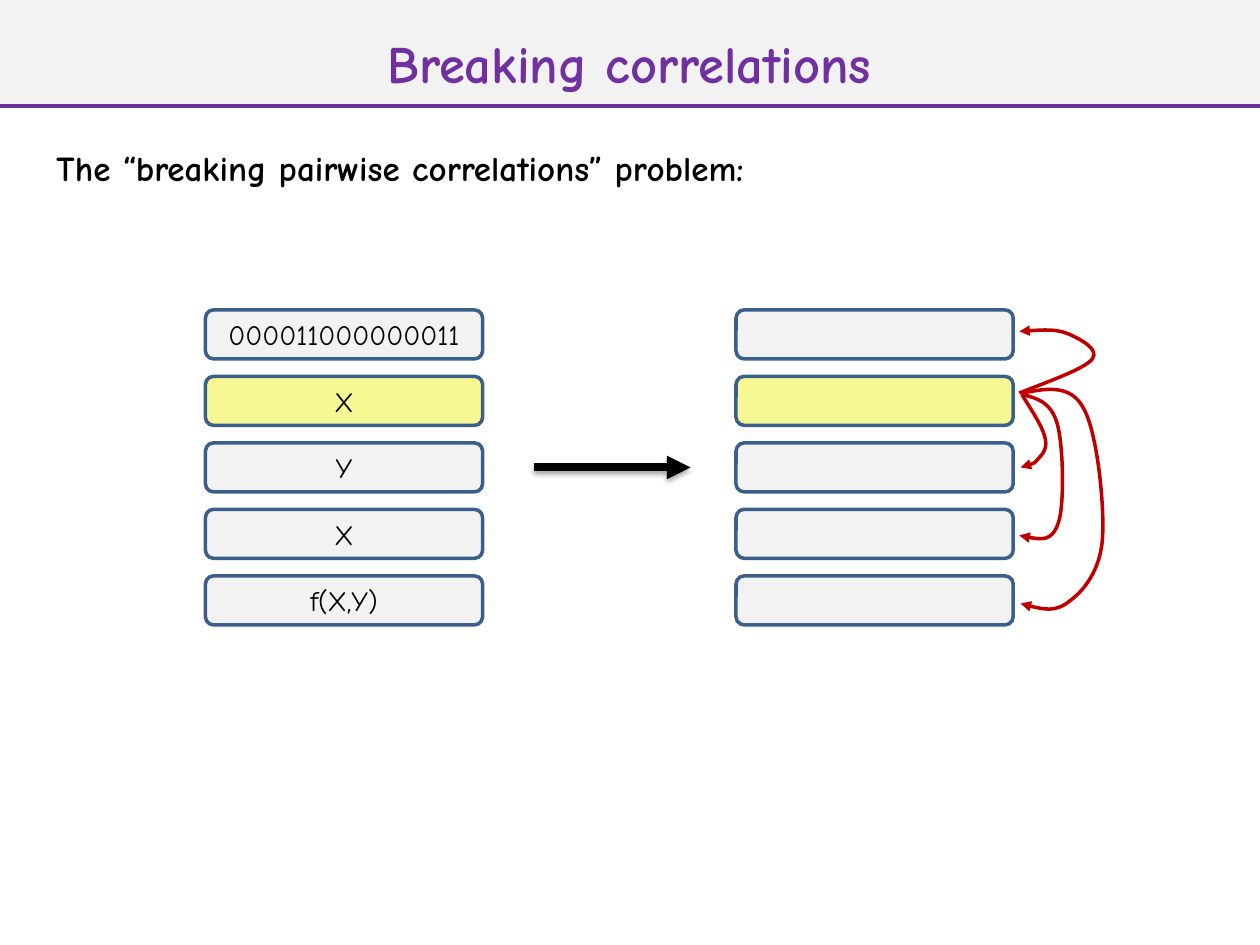
import pptx
import pptx.dml.color
import pptx.enum.shapes
import pptx.enum.text
import pptx.oxml
import pptx.oxml.ns
import pptx.util
from pptx.util import Pt

FONT = "Comic Neue"
BLACK, PURPLE, RED, BLUE = "000000", "7030A0", "C00000", "3A5F8C"
GREY, YELLOW = "F2F2F2", "F7F793"

ROW_TOP, ROW_PITCH = 177.1, 38
BOX_WIDTH, BOX_HEIGHT = 158.4, 28
INPUT_LEFT, OUTPUT_LEFT = 117.4, 420.6
INPUT_ROWS = ["000011000000011", "X", "Y", "X", "f(X,Y)"]
HIGHLIGHTED_ROW = 1

# Each curve is a start point followed by three points per cubic segment.
CORRELATION_CURVES = [
    [(582.5, 224.6), (600.5, 217.4), (619.2, 211), (624.2, 205.2),
     (628.6, 199.4), (617, 193.7), (610.6, 190.8),
     (603.4, 187.9), (592.6, 188.6), (582.5, 189.4)],
    [(583.9, 225.4), (589.7, 234.7), (595.4, 243.4), (596.9, 249.1),
     (599, 255.6), (596.2, 259.2), (593.3, 262.1),
     (591.1, 265), (586.8, 266.4), (583.2, 267.1)],
    [(583.9, 225.4), (592.6, 227.5), (600.5, 229.7), (604.1, 241.9),
     (607.7, 254.2), (608.4, 288.7), (604.8, 298.8),
     (601.2, 309.6), (591.8, 308.2), (582.5, 306)],
    [(584.6, 224.6), (598.3, 221.8), (612, 219.6), (619.2, 233.3),
     (627.1, 247), (631.4, 289.4), (630, 308.2),
     (628.6, 326.2), (619.2, 337.7), (611.3, 343.4),
     (603.4, 349.9), (593.3, 347.8), (583.2, 344.9)],
]


def color(hex_string):
    return pptx.dml.color.RGBColor.from_string(hex_string)


def xml_element(markup):
    """Parse one element whose tag still needs the drawing namespace."""
    tag, rest = markup[1:].split(" ", 1)
    return pptx.oxml.parse_xml(f"<{tag} {pptx.oxml.ns.nsdecls('a')} {rest}")


def set_line(shape, line_color, width):
    shape.line.color.rgb = color(line_color)
    shape.line.width = Pt(width)


def add_arrowhead(shape):
    outline = shape._element.spPr.find(pptx.oxml.ns.qn("a:ln"))
    outline.append(xml_element('<a:tailEnd type="triangle"/>'))


def write(frame, text, size, text_color, alignment, bold=False):
    paragraph = frame.paragraphs[0]
    paragraph.alignment = alignment
    run = paragraph.add_run()
    run.text = text
    run.font.name = FONT
    run.font.size = Pt(size)
    run.font.bold = bold
    run.font.color.rgb = color(text_color)
    return paragraph


def add_box(slide, preset, left, top, width, height, fill, line_color, line_width):
    box = slide.shapes.add_shape(preset, Pt(left), Pt(top), Pt(width), Pt(height))
    box.shadow.inherit = False
    box.fill.solid()
    box.fill.fore_color.rgb = color(fill)
    set_line(box, line_color, line_width)
    return box


def add_heading(slide):
    band = add_box(slide, pptx.enum.shapes.MSO_SHAPE.RECTANGLE,
                   -20.2, -30.2, 768.2, 90.7, GREY, PURPLE, 2.5)
    title = slide.shapes.title
    title._element.addprevious(band._element)
    title.left, title.top = Pt(-12.2), Pt(-9.4)
    title.width, title.height = Pt(743.8), Pt(90)
    title.text_frame.vertical_anchor = pptx.enum.text.MSO_ANCHOR.MIDDLE
    write(title.text_frame, "Breaking correlations", 30, PURPLE,
          pptx.enum.text.PP_ALIGN.CENTER, bold=True)


def add_problem_statement(slide):
    statement = slide.shapes.add_textbox(Pt(25.2), Pt(79.9), Pt(470.9), Pt(31))
    statement.text_frame.word_wrap = True
    paragraph = write(statement.text_frame, "The “breaking pairwise correlations” problem:",
                      20, BLACK, pptx.enum.text.PP_ALIGN.JUSTIFY, bold=True)
    paragraph.space_before = Pt(4)


def add_row_stack(slide, left, labels):
    for row, label in enumerate(labels):
        fill = YELLOW if row == HIGHLIGHTED_ROW else GREY
        box = add_box(slide, pptx.enum.shapes.MSO_SHAPE.ROUNDED_RECTANGLE,
                      left, ROW_TOP + row * ROW_PITCH, BOX_WIDTH, BOX_HEIGHT,
                      fill, BLUE, 2)
        if label:
            box.text_frame.vertical_anchor = pptx.enum.text.MSO_ANCHOR.MIDDLE
            write(box.text_frame, label, 16, BLACK, pptx.enum.text.PP_ALIGN.CENTER)


def add_transform_arrow(slide):
    arrow = slide.shapes.add_connector(pptx.enum.shapes.MSO_CONNECTOR.STRAIGHT,
                                       Pt(305.3), Pt(267.1), Pt(394.6), Pt(267.1))
    set_line(arrow, BLACK, 4.5)
    add_arrowhead(arrow)
    arrow._element.spPr.append(xml_element(
        f'<a:effectLst ><a:outerShdw blurRad="{Pt(3.1)}" dist="{Pt(1.8)}" dir="5400000" '
        'rotWithShape="0"><a:srgbClr val="000000"><a:alpha val="35000"/></a:srgbClr>'
        '</a:outerShdw></a:effectLst>'))


def add_curved_arrow(slide, points):
    """Draw the points as line segments, then join each three into one cubic."""
    (start_x, start_y), *rest = [(Pt(x), Pt(y)) for x, y in points]
    builder = slide.shapes.build_freeform(start_x, start_y)
    builder.add_line_segments(rest, close=False)
    curve = builder.convert_to_shape()
    curve.shadow.inherit = False
    curve.fill.background()
    set_line(curve, RED, 2)
    add_arrowhead(curve)

    qn = pptx.oxml.ns.qn
    segments = list(curve._element.iter(qn("a:lnTo")))
    for first in range(0, len(segments), 3):
        cubic = xml_element("<a:cubicBezTo />")
        segments[first].addprevious(cubic)
        for segment in segments[first:first + 3]:
            cubic.append(segment.find(qn("a:pt")))
            segment.getparent().remove(segment)


def main():
    presentation = pptx.Presentation()
    presentation.slide_width, presentation.slide_height = Pt(720), Pt(540)
    slide = presentation.slides.add_slide(presentation.slide_layouts[5])
    add_heading(slide)
    add_transform_arrow(slide)
    add_row_stack(slide, INPUT_LEFT, INPUT_ROWS)
    add_row_stack(slide, OUTPUT_LEFT, [""] * len(INPUT_ROWS))
    for points in CORRELATION_CURVES:
        add_curved_arrow(slide, points)
    add_problem_statement(slide)
    presentation.save("out.pptx")


if __name__ == "__main__":
    main()
